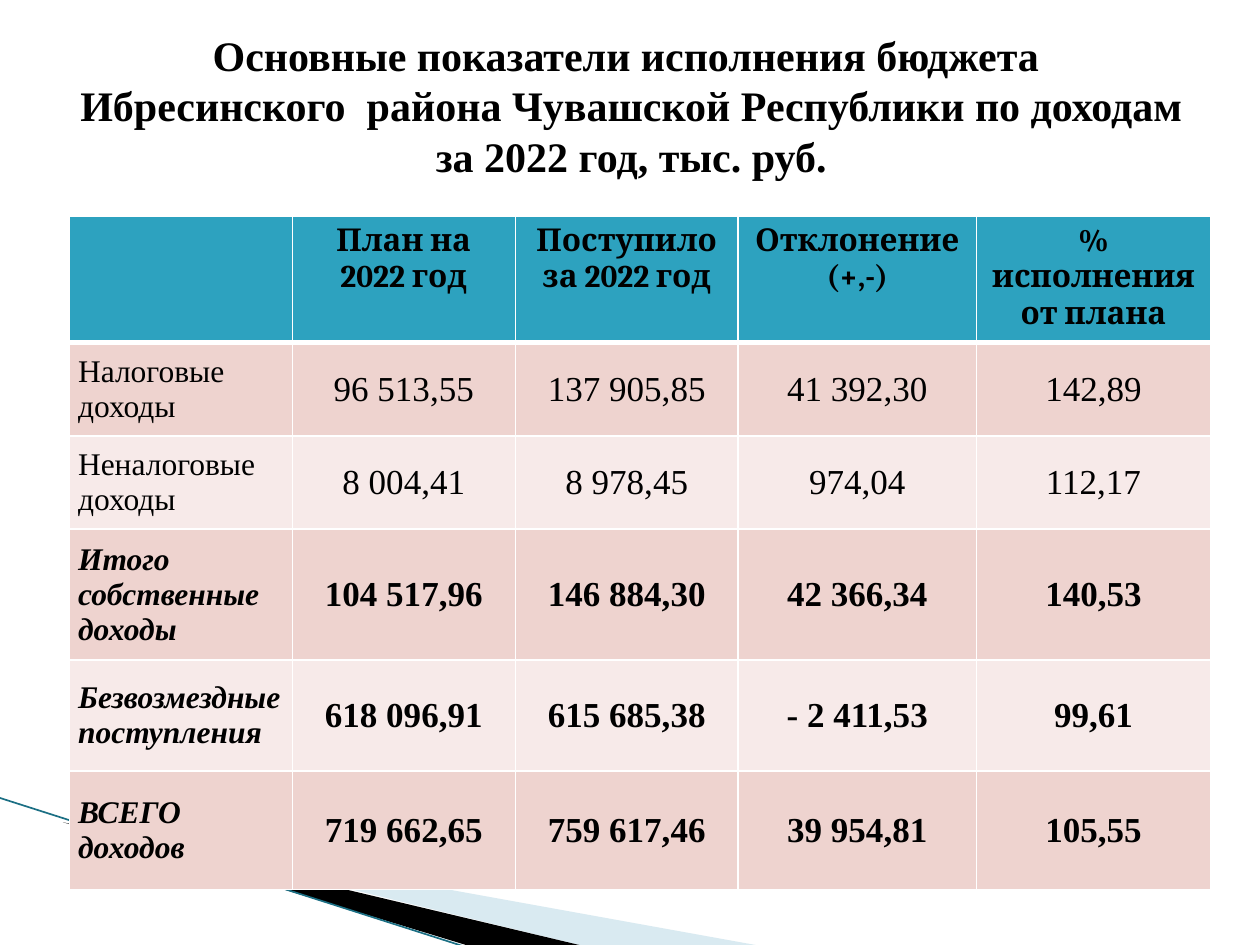
from dataclasses import dataclass

from lxml.etree import SubElement
from pptx import Presentation
from pptx.dml.color import RGBColor as RGB
from pptx.enum.shapes import MSO_CONNECTOR as Conn
from pptx.enum.text import MSO_ANCHOR as Anchor, PP_ALIGN as Align
from pptx.oxml.ns import qn
from pptx.util import Inches, Pt

W, H = Inches(10), Inches(7.5)


@dataclass(frozen=True)
class Theme:
    ink: str = "000000"
    header: str = "2DA2BF"
    bands: tuple = ("EED3CF", "F7EAE9")
    grid: str = "FFFFFF"
    wedge: str = "A0CBDC"
    ray: str = "1B6F84"
    body_font: str = "Times New Roman"
    head_font: str = "Cambria"
    title_size: int = 24
    label_size: int = 18
    value_size: int = 20


@dataclass(frozen=True)
class Wedge:
    """Corner polygon; points are percentages of the slide's size."""
    points: tuple
    color: str
    alpha: int = 100


@dataclass(frozen=True)
class Income:
    label: str
    values: tuple
    height: float
    total: bool = False


T = Theme()
WEDGES = (
    Wedge(((5.5, 86.8), (59.5, 100.13), (45.6, 100.13), (5.5, 86.67)), T.wedge, 40),
    Wedge(((5.3, 86.53), (45.7, 100.13), (37.2, 100.27), (5.4, 86.67)), T.ink),
)
RAY = ((-0.1, 84.4), (37.1, 100.27))
TITLE = ("Основные показатели исполнения бюджета \v"
         "Ибресинского  района Чувашской Республики по доходам за 2022 год, тыс. руб.")
TITLE_BOX = (5.1, 2.8, 90, 16.67)
TABLE_AT = (5.5, 22.93)
COLUMNS = (17.7, 17.7, 17.7, 18.9, 18.6)
HEADER_HEIGHT = 12
HEADERS = ("", "План на\n2022 год", "Поступило за 2022 год",
           "Отклонение\n(+,-)", "% исполнения от плана")
INCOMES = (
    Income("Налоговые доходы", ("96 513,55", "137 905,85", "41 392,30", "142,89"), 9.73),
    Income("Неналоговые доходы", ("8 004,41", "8 978,45", "974,04", "112,17"), 9.73),
    Income("Итого собственные доходы",
           ("104 517,96", "146 884,30", "42 366,34", "140,53"), 12.53, True),
    Income("Безвозмездные поступления",
           ("618 096,91", "615 685,38", "- 2 411,53", "99,61"), 11.73, True),
    Income("ВСЕГО доходов",
           ("719 662,65", "759 617,46", "39 954,81", "105,55"), 12.53, True),
)


def px(share: float) -> int:
    return round(W * share / 100)


def py(share: float) -> int:
    return round(H * share / 100)


def set_attrs(obj, **values) -> None:
    for name, value in values.items():
        setattr(obj, name, value)


def write(tf, text: str, align, font: str, size: int,
          bold: bool = False, italic: bool = False) -> None:
    tf.text = text
    for p in tf.paragraphs:
        p.alignment = align
        for r in p.runs:
            set_attrs(r.font, name=font, size=Pt(size), bold=bold, italic=italic)
            r.font.color.rgb = RGB.from_string(T.ink)


def add_wedge(s, wedge: Wedge) -> None:
    start, *rest = wedge.points
    fb = s.shapes.build_freeform(*start, scale=(W / 100, H / 100))
    fb.add_line_segments(rest, close=True)
    sp = fb.convert_to_shape()
    sp.shadow.inherit = False
    sp.line.fill.background()
    sp.fill.solid()
    sp.fill.fore_color.rgb = RGB.from_string(wedge.color)
    if wedge.alpha < 100:
        clr = sp.fill._xPr.find(f"{qn('a:solidFill')}/{qn('a:srgbClr')}")
        SubElement(clr, qn("a:alpha"), val=str(wedge.alpha * 1000))


def add_ray(s) -> None:
    (x1, y1), (x2, y2) = RAY
    ray = s.shapes.add_connector(Conn.STRAIGHT, px(x1), py(y1), px(x2), py(y2))
    ray.line.color.rgb = RGB.from_string(T.ray)
    ray.line.width = Pt(0.95)
    SubElement(ray._element.spPr, qn("a:effectLst"))


def add_title(s) -> None:
    x, y, w, h = TITLE_BOX
    tf = s.shapes.add_textbox(px(x), py(y), px(w), py(h)).text_frame
    set_attrs(tf, word_wrap=True, vertical_anchor=Anchor.MIDDLE)
    write(tf, TITLE, Align.CENTER, T.body_font, T.title_size, bold=True)


def style_cell(cell, fill: str, top: int = 1, bottom: int = 1) -> None:
    """Draw the cell's borders (widths in points), then its fill."""
    tc_pr = cell._tc.get_or_add_tcPr()
    for side, width in {"L": 1, "R": 1, "T": top, "B": bottom}.items():
        ln = SubElement(tc_pr, qn(f"a:ln{side}"), w=str(Pt(width)))
        SubElement(SubElement(ln, qn("a:solidFill")), qn("a:srgbClr"), val=T.grid)
    cell.fill.solid()
    cell.fill.fore_color.rgb = RGB.from_string(fill)


def fill_income_row(cells, income: Income, index: int) -> None:
    inset = Inches(0.07)
    for col, (cell, text) in enumerate(zip(cells, (income.label, *income.values))):
        style_cell(cell, T.bands[index % 2], top=1 if index else 3)
        set_attrs(cell, vertical_anchor=Anchor.MIDDLE, margin_left=inset,
                  margin_right=inset, margin_top=inset, margin_bottom=inset)
        write(cell.text_frame, text, Align.CENTER if col else Align.LEFT, T.body_font,
              T.value_size if col else T.label_size,
              bold=income.total, italic=income.total and not col)


def add_income_table(s) -> None:
    heights = (HEADER_HEIGHT, *(i.height for i in INCOMES))
    x, y = TABLE_AT
    table = s.shapes.add_table(len(heights), len(COLUMNS), px(x), py(y),
                               px(sum(COLUMNS)), py(sum(heights))).table
    for column, width in zip(table.columns, COLUMNS):
        column.width = px(width)
    for row, height in zip(table.rows, heights):
        row.height = py(height)
    header, *body = table.rows
    for cell, text in zip(header.cells, HEADERS):
        style_cell(cell, T.header, bottom=3)
        write(cell.text_frame, text, Align.CENTER, T.head_font, T.label_size, bold=True)
    for index, (row, income) in enumerate(zip(body, INCOMES)):
        fill_income_row(row.cells, income, index)


def main() -> None:
    prs = Presentation()
    set_attrs(prs, slide_width=W, slide_height=H)
    s = prs.slides.add_slide(prs.slide_layouts[6])
    for wedge in WEDGES:
        add_wedge(s, wedge)
    add_ray(s)
    add_title(s)
    add_income_table(s)
    prs.save("out.pptx")


if __name__ == "__main__":
    main()
